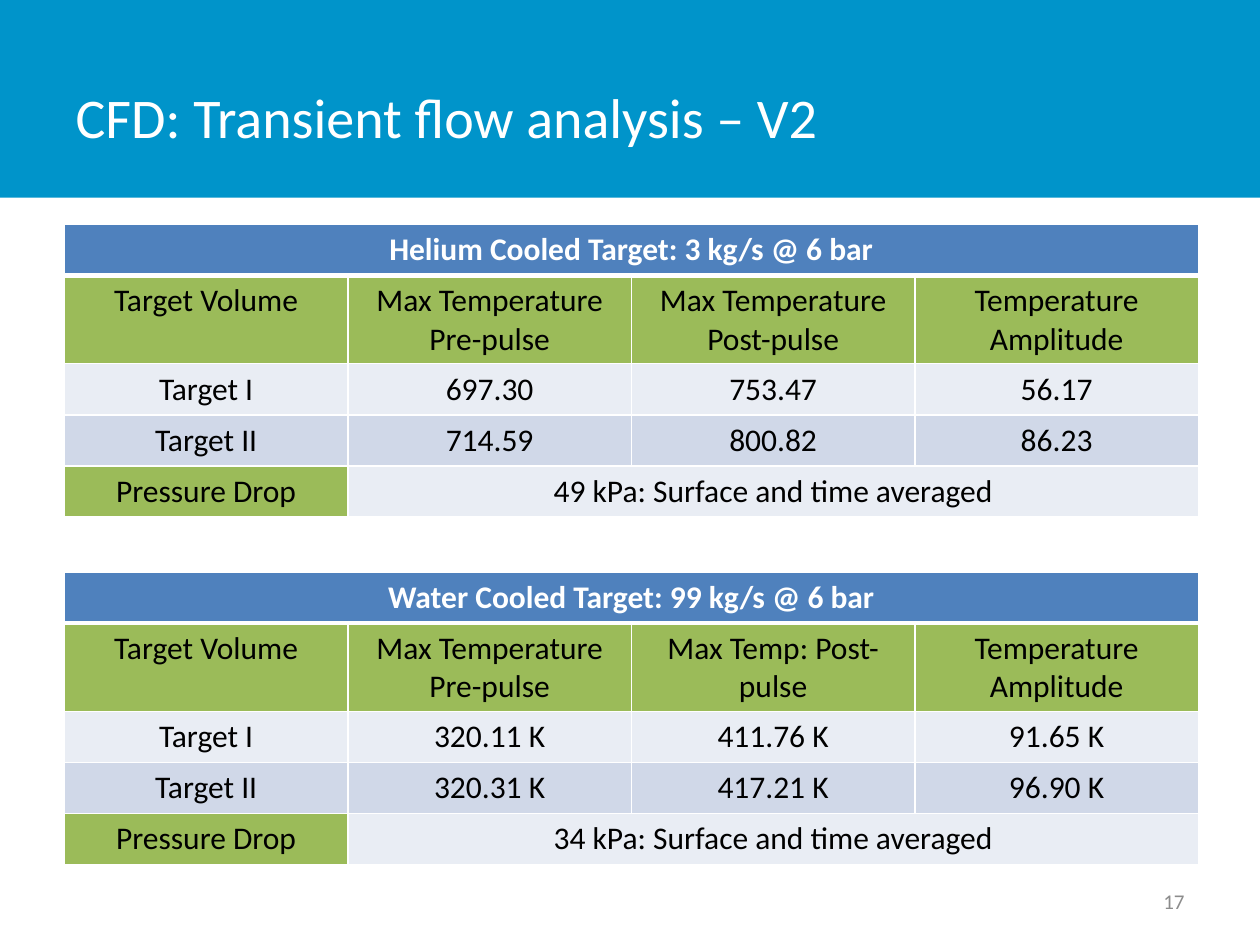
from lxml.etree import SubElement
from pptx import Presentation
from pptx.dml.color import RGBColor
from pptx.enum.shapes import MSO_SHAPE
from pptx.enum.text import MSO_ANCHOR, PP_ALIGN
from pptx.oxml.ns import qn
from pptx.util import Pt

FONT = "Calibri"
WHITE = RGBColor(0xFF, 0xFF, 0xFF)
BLACK = RGBColor(0x00, 0x00, 0x00)
GREY = RGBColor(0x8C, 0x8C, 0x8C)
BANNER_BLUE = RGBColor(0x00, 0x94, 0xCA)
HEADING_BLUE = RGBColor(0x4F, 0x81, 0xBD)
LABEL_GREEN = RGBColor(0x9B, 0xBB, 0x59)
LIGHT_BAND = RGBColor(0xE9, 0xED, 0xF4)
DARK_BAND = RGBColor(0xD0, 0xD8, 0xE8)

ROW_HEIGHTS = (29.2, 50.4, 29.2, 29.2, 29.2)
COLUMN_WIDTH = 162
COLUMN_COUNT = 4
TABLE_LEFT = 36.8

HELIUM = (
    ("Helium Cooled Target: 3 kg/s @ 6 bar",),
    ("Target Volume", "Max Temperature Pre-pulse",
     "Max Temperature Post-pulse", "Temperature Amplitude"),
    ("Target I", "697.30", "753.47", "56.17"),
    ("Target II", "714.59", "800.82", "86.23"),
    ("Pressure Drop", "49 kPa: Surface and time averaged"),
)
WATER = (
    ("Water Cooled Target: 99 kg/s @ 6 bar",),
    ("Target Volume", "Max Temperature Pre-pulse",
     "Max Temp: Post-pulse", "Temperature Amplitude"),
    ("Target I", "320.11 K", "411.76 K", "91.65 K"),
    ("Target II", "320.31 K", "417.21 K", "96.90 K"),
    ("Pressure Drop", "34 kPa: Surface and time averaged"),
)


def write(frame, text, size, color, align, bold=False):
    """Put one formatted run in the first paragraph of a text frame."""
    frame.word_wrap = True
    paragraph = frame.paragraphs[0]
    paragraph.alignment = align
    run = paragraph.add_run()
    run.text = text
    run.font.name = FONT
    run.font.size = Pt(size)
    run.font.bold = bold
    run.font.color.rgb = color


def add_banner(slide):
    """Draw the blue band behind the title."""
    banner = slide.shapes.add_shape(MSO_SHAPE.RECTANGLE, 0, 0, Pt(720), Pt(113))
    banner.shadow.inherit = False
    banner.fill.solid()
    banner.fill.fore_color.rgb = BANNER_BLUE
    banner.line.fill.background()
    slide.shapes._spTree.insert(2, banner._element)


def add_title(slide, text):
    """Place and fill the title placeholder."""
    title = slide.shapes.title
    title.left, title.top, title.width, title.height = Pt(36), Pt(21.6), Pt(562), Pt(90)
    title.text_frame.vertical_anchor = MSO_ANCHOR.MIDDLE
    write(title.text_frame, text, 32, WHITE, PP_ALIGN.LEFT)


def add_page_number(slide, number):
    """Write the page number at the lower right."""
    page = slide.shapes.add_textbox(Pt(516), Pt(500.5), Pt(168), Pt(28.8))
    page.text_frame.vertical_anchor = MSO_ANCHOR.MIDDLE
    write(page.text_frame, number, 12, GREY, PP_ALIGN.RIGHT)


def set_borders(cell, top, bottom):
    """Give a cell white borders, with its top and bottom widths in points."""
    properties = cell._tc.get_or_add_tcPr()
    for side, width in (("L", 1), ("R", 1), ("T", top), ("B", bottom)):
        line = SubElement(properties, qn(f"a:ln{side}"), w=str(Pt(width)))
        fill = SubElement(line, qn("a:solidFill"))
        SubElement(fill, qn("a:srgbClr"), val=str(WHITE))


def cell_fill(row, column):
    """Choose the fill of a cell from its place in the table."""
    if row == 0:
        return HEADING_BLUE
    if row == 1 or (row == 4 and column == 0):
        return LABEL_GREEN
    return DARK_BAND if row == 3 else LIGHT_BAND


def add_results(slide, top, rows):
    """Add a results table whose short rows span the remaining columns."""
    table = slide.shapes.add_table(
        len(rows), COLUMN_COUNT, Pt(TABLE_LEFT), Pt(top),
        Pt(COLUMN_WIDTH * COLUMN_COUNT), Pt(sum(ROW_HEIGHTS))).table
    for column in table.columns:
        column.width = Pt(COLUMN_WIDTH)
    for row, texts in enumerate(rows):
        table.rows[row].height = Pt(ROW_HEIGHTS[row])
        heading = row == 0
        for column in range(COLUMN_COUNT):
            cell = table.cell(row, column)
            set_borders(cell, 3 if row == 1 else 1, 3 if heading else 1)
            cell.fill.solid()
            cell.fill.fore_color.rgb = cell_fill(row, column)
        for column, text in enumerate(texts):
            write(table.cell(row, column).text_frame, text, 18,
                  WHITE if heading else BLACK, PP_ALIGN.CENTER, heading)
        if len(texts) < COLUMN_COUNT:
            table.cell(row, len(texts) - 1).merge(table.cell(row, COLUMN_COUNT - 1))


def main():
    """Build the slide and save it."""
    deck = Presentation()
    deck.slide_width, deck.slide_height = Pt(720), Pt(540)
    slide = deck.slides.add_slide(deck.slide_layouts[5])
    add_banner(slide)
    add_title(slide, "CFD: Transient flow analysis – V2")
    add_page_number(slide, "17")
    add_results(slide, 128.2, HELIUM)
    add_results(slide, 326.9, WATER)
    deck.save("out.pptx")


if __name__ == "__main__":
    main()
